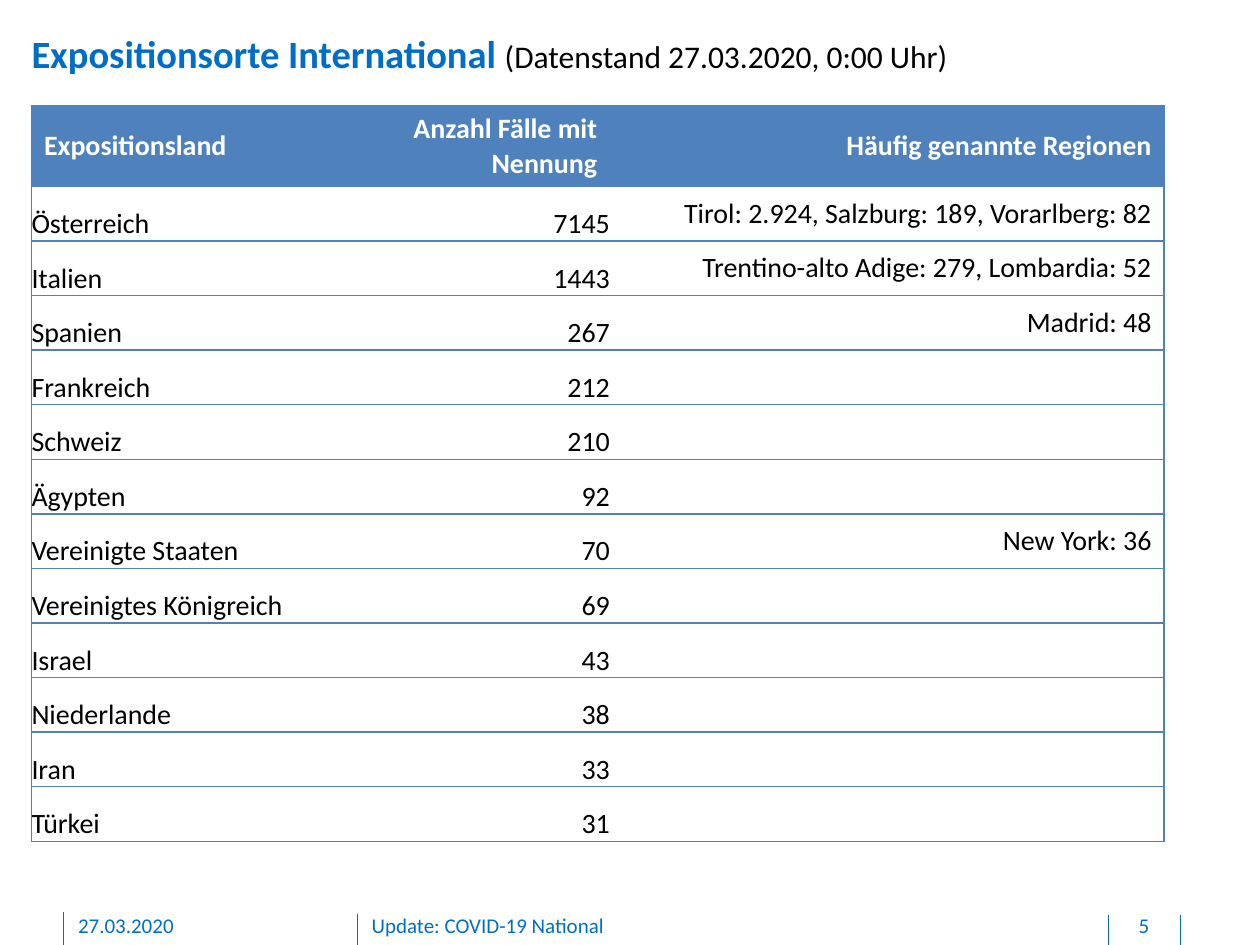
"""Build the slide on international places of exposure."""
from lxml.etree import SubElement
from pptx import Presentation
from pptx.dml.color import RGBColor
from pptx.enum.shapes import MSO_CONNECTOR
from pptx.enum.text import MSO_ANCHOR, PP_ALIGN
from pptx.oxml.ns import qn
from pptx.util import Inches, Pt

COLORS = {"accent": "006EC7", "table": "4F81BD", "white": "FFFFFF", "black": "000000"}
FONT = "Calibri"
NO_GRID_STYLE = "{2D5ABB26-0587-4C30-8999-92F81FD0307C}"
HEADERS = ("Expositionsland", "Anzahl Fälle mit Nennung", "Häufig genannte Regionen")
COUNTRIES = [
    ("Österreich", "7145", "Tirol: 2.924, Salzburg: 189, Vorarlberg: 82"),
    ("Italien", "1443", "Trentino-alto Adige: 279, Lombardia: 52"),
    ("Spanien", "267", "Madrid: 48"),
    ("Frankreich", "212", ""),
    ("Schweiz", "210", ""),
    ("Ägypten", "92", ""),
    ("Vereinigte Staaten", "70", "New York: 36"),
    ("Vereinigtes Königreich", "69", ""),
    ("Israel", "43", ""),
    ("Niederlande", "38", ""),
    ("Iran", "33", ""),
    ("Türkei", "31", ""),
]


class SlideBuilder:
    """Hold the style and the current slide."""

    def __init__(self, prs):
        self.slide = prs.slides.add_slide(prs.slide_layouts[5])

    def style(self, font, size, color, bold=False):
        font.name, font.size, font.bold = FONT, Pt(size), bold
        font.color.rgb = RGBColor.from_string(COLORS[color])

    def place(self, sp, box):
        sp.left, sp.top, sp.width, sp.height = (Inches(v) for v in box)

    def frame(self, sp, bottom=0):
        tf = sp.text_frame
        tf.word_wrap = True
        tf.margin_left = tf.margin_right = tf.margin_top = 0
        tf.margin_bottom = Inches(bottom)
        tf.vertical_anchor = MSO_ANCHOR.TOP
        return tf

    def title(self, box, runs):
        sp = self.slide.shapes.title
        self.place(sp, box)
        p = self.frame(sp).paragraphs[0]
        p.alignment = PP_ALIGN.LEFT
        for text, size, color, bold in runs:
            r = p.add_run()
            r.text = text
            self.style(r.font, size, color, bold)

    def text(self, box, text, align=PP_ALIGN.LEFT):
        sp = self.slide.shapes.add_textbox(*(Inches(v) for v in box))
        p = self.frame(sp, 0.05).paragraphs[0]
        p.text, p.alignment = text, align
        self.style(p.font, 12, "accent")

    def divider(self, x, top):
        line = self.slide.shapes.add_connector(
            MSO_CONNECTOR.STRAIGHT, Inches(x), Inches(top), Inches(x), Inches(7.5))
        line.line.color.rgb = RGBColor.from_string(COLORS["accent"])
        line.line.width = Pt(0.5)
        SubElement(line._element.spPr, qn("a:effectLst"))

    def borders(self, cell, sides):
        tcPr = cell._tc.get_or_add_tcPr()
        for side in sides:
            ln = SubElement(tcPr, qn(f"a:ln{side}"), w=str(Pt(1)))
            fill = SubElement(ln, qn("a:solidFill"))
            SubElement(fill, qn("a:srgbClr"), val=COLORS["table"])

    def cell(self, cell, text, col, header):
        self.borders(cell, ("LTB", "TB", "RTB")[col])
        cell.fill.solid()
        cell.fill.fore_color.rgb = RGBColor.from_string(COLORS["table" if header else "white"])
        cell.vertical_anchor = MSO_ANCHOR.MIDDLE
        if not header and col < 2:
            cell.vertical_anchor = MSO_ANCHOR.BOTTOM
            cell.margin_left = cell.margin_right = cell.margin_top = cell.margin_bottom = 0
        p = cell.text_frame.paragraphs[0]
        p.text = text
        p.alignment = PP_ALIGN.RIGHT if col else PP_ALIGN.LEFT
        self.style(p.font, 16, "white" if header else "black", header)

    def table(self, box, widths, header_height, rows):
        left, top, width, height = box
        table = self.slide.shapes.add_table(
            len(rows), len(widths), *(Inches(v) for v in box)).table
        table._tbl.tblPr.find(qn("a:tableStyleId")).text = NO_GRID_STYLE
        for column, w in zip(table.columns, widths):
            column.width = Inches(w)
        row_height = (height - header_height) / (len(rows) - 1)
        for i, values in enumerate(rows):
            table.rows[i].height = Inches(row_height if i else header_height)
            for j, value in enumerate(values):
                self.cell(table.cell(i, j), value, j, i == 0)


def main():
    prs = Presentation()
    prs.slide_width, prs.slide_height = Inches(10), Inches(7.5)
    s = SlideBuilder(prs)
    for x, top in ((0.5, 7.24), (2.84, 7.25), (8.8, 7.26), (9.37, 7.26)):
        s.divider(x, top)
    s.title((0.25, 0.24, 8.85, 0.37), [
        ("Expositionsorte International ", 22, "accent", True),
        ("(Datenstand 27.03.2020, 0:00 Uhr)", 18, "black", False),
    ])
    s.text((0.62, 7.24, 2.03, 0.21), "27.03.2020")
    s.text((2.95, 7.24, 5.67, 0.21), "Update: COVID-19 National")
    s.text((8.81, 7.24, 0.54, 0.21), "5", PP_ALIGN.CENTER)
    s.table((0.25, 0.84, 8.99, 5.84), (2.49, 2.1, 4.4), 0.64, [HEADERS] + COUNTRIES)
    prs.save("out.pptx")


if __name__ == "__main__":
    main()
